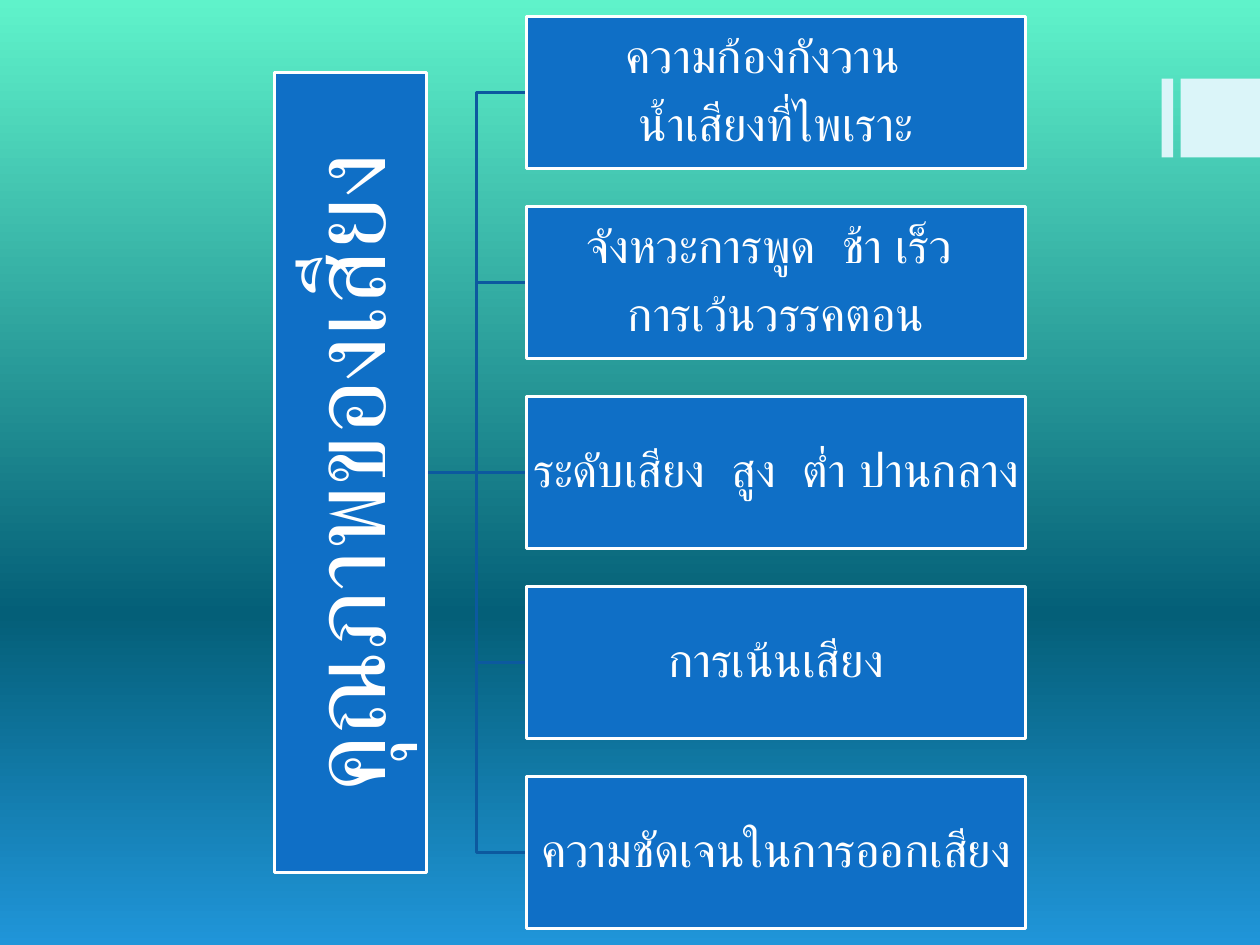
from copy import deepcopy
from dataclasses import dataclass

from lxml.etree import SubElement
from pptx import Presentation
from pptx.dml.color import RGBColor
from pptx.enum.shapes import MSO_CONNECTOR, MSO_SHAPE
from pptx.enum.text import MSO_ANCHOR, PP_ALIGN
from pptx.oxml.ns import qn
from pptx.util import Inches, Pt


@dataclass(frozen=True)
class Theme:
    font: str = "Arial"
    root_size: int = 61
    branch_size: int = 27
    line_width: float = 1.5
    box_fill: str = "0F6FC6"
    white: str = "FFFFFF"
    link: str = "0C599F"
    accent: str = "DBF5F9"
    backdrop: tuple = ((0, "5FF3CA"), (0.65, "045F78"), (1, "2095D9"))


THEME = Theme()
WIDTH, HEIGHT = 10, 7.5

ROOT = "คุณภาพของเสียง"
BRANCHES = [
    ["ความก้องกังวาน  ", "น้ำเสียงที่ไพเราะ"],
    ["จังหวะการพูด  ช้า เร็ว ", "การเว้นวรรคตอน"],
    ["ระดับเสียง  สูง  ต่ำ ปานกลาง"],
    ["การเน้นเสียง"],
    ["ความชัดเจนในการออกเสียง"],
]


def color(code):
    return RGBColor.from_string(code)


def paint_background(page):
    fill = page.background.fill
    fill.gradient()
    fill.gradient_angle = 270
    # A new gradient has two stops; add a third
    stops = page.element.find(".//" + qn("a:gsLst"))
    stops.append(deepcopy(stops[-1]))
    for stop, (position, code) in zip(fill.gradient_stops, THEME.backdrop):
        stop.position = position
        stop.color.rgb = color(code)


def add_box(page, left, top, width, height, fill, outline=None):
    box = page.shapes.add_shape(
        MSO_SHAPE.RECTANGLE, *(Inches(v) for v in (left, top, width, height)))
    box.shadow.inherit = False
    box.fill.solid()
    box.fill.fore_color.rgb = color(fill)
    if outline:
        box.line.color.rgb = color(outline)
        box.line.width = Pt(THEME.line_width)
    else:
        box.line.fill.background()
    return box


def write_lines(box, lines, size, inset):
    frame = box.text_frame
    frame.word_wrap = True
    frame.vertical_anchor = MSO_ANCHOR.MIDDLE
    frame.margin_left = frame.margin_right = Inches(inset)
    frame.margin_top = frame.margin_bottom = Inches(inset)
    for index, line in enumerate(lines):
        para = frame.add_paragraph() if index else frame.paragraphs[0]
        para.alignment = PP_ALIGN.CENTER
        para.line_spacing = 0.9
        # Space after as a share of the type size
        after = SubElement(para._p.get_or_add_pPr(), qn("a:spcAft"))
        SubElement(after, qn("a:spcPct"), val="35000")
        span = para.add_run()
        span.text = line
        span.font.name = THEME.font
        span.font.size = Pt(size)
        span.font.color.rgb = color(THEME.white)
        # Thai is set in the complex-script font
        SubElement(span.font._element, qn("a:cs"), typeface=THEME.font)


def add_link(page, start, end):
    straight = start[1] == end[1]
    kind = MSO_CONNECTOR.STRAIGHT if straight else MSO_CONNECTOR.ELBOW
    link = page.shapes.add_connector(kind, *(Inches(v) for v in start + end))
    link.line.color.rgb = color(THEME.link)
    link.line.width = Pt(THEME.line_width)
    SubElement(link._element.spPr, qn("a:effectLst"))


def add_side_marks(page, left, top, width, height):
    gap = 0.06
    bar = 0.09
    square = width - bar - gap
    add_box(page, left, top, bar, height, THEME.accent)
    add_box(page, left + bar + gap, top, square, height, THEME.accent)


def add_hierarchy(page, left, top, width, height):
    # Columns: root, links, branches; rows: boxes with a quarter-box gap
    row = height / (len(BRANCHES) + 0.25 * (len(BRANCHES) - 1))
    pitch = row * 1.25
    root_length = 6.35
    branch_width = 3.96
    branch_left = left + width - branch_width
    middle = top + height / 2
    tops = [top + index * pitch for index in range(len(BRANCHES))]

    # Links lie behind the boxes
    for branch_top in reversed(tops):
        end_y = round(branch_top + row / 2, 4)
        add_link(page, (left + row, round(middle, 4)), (branch_left, end_y))

    # Root box, turned to read upwards
    root = add_box(page, left + (row - root_length) / 2, middle - row / 2,
                   root_length, row, THEME.box_fill, THEME.white)
    root.rotation = 270
    write_lines(root, [ROOT], THEME.root_size, 0.04)

    # Branch boxes
    for branch_top, lines in zip(tops, BRANCHES):
        branch = add_box(page, branch_left, branch_top, branch_width, row,
                         THEME.box_fill, THEME.white)
        write_lines(branch, lines, THEME.branch_size, 0.02)


def main():
    deck = Presentation()
    deck.slide_width, deck.slide_height = Inches(WIDTH), Inches(HEIGHT)
    page = deck.slides.add_slide(deck.slide_layouts[6])
    paint_background(page)
    add_side_marks(page, 9.22, HEIGHT / 12, 0.78, HEIGHT / 12)
    add_hierarchy(page, 2.18, 0.13, 5.96, 7.24)
    deck.save("out.pptx")


if __name__ == "__main__":
    main()
